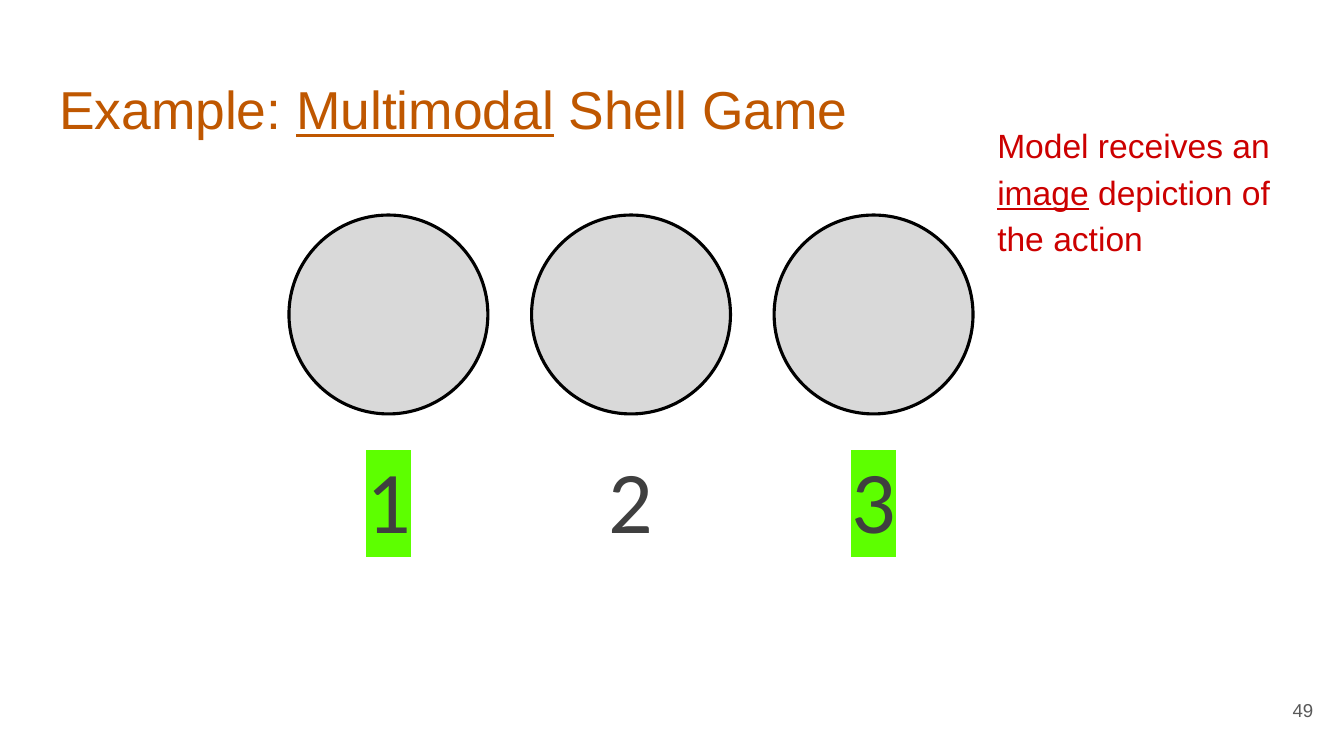
from lxml.etree import SubElement as Sub, Element
from pptx import Presentation
from pptx.dml.color import RGBColor as RGB
from pptx.enum.shapes import MSO_SHAPE as Shape
from pptx.enum.text import MSO_ANCHOR as Anchor, MSO_AUTO_SIZE as Fit, PP_ALIGN as Align
from pptx.oxml.ns import qn
from pptx.util import Inches, Pt

COLORS = {
    "title": "BF5700", "note": "CC0000", "cup": "D9D9D9", "edge": "000000",
    "label": "3F3F3F", "mark": "5DFF00", "page": "595959",
}


class Deck:
    def __init__(self, width, height):
        self.prs = Presentation()
        self.prs.slide_width = Inches(width)
        self.prs.slide_height = Inches(height)
        self.slide = self.prs.slides.add_slide(self.prs.slide_layouts[1])

    def color(self, name):
        return RGB.from_string(COLORS[name])

    def fill_text(self, shape, runs, size, color, align=Align.LEFT,
                  font="Arial", inset=(0.1, 0.05), anchor=Anchor.MIDDLE, mark=None):
        """Write (text, underlined) runs into one paragraph."""
        frame = shape.text_frame
        frame.word_wrap = True
        frame.auto_size = Fit.NONE
        frame.vertical_anchor = anchor
        frame.margin_left = frame.margin_right = Inches(inset[0])
        frame.margin_top = frame.margin_bottom = Inches(inset[1])
        para = frame.paragraphs[0]
        para.alignment = align
        for text, under in runs:
            run = para.add_run()
            run.text = text
            run.font.size = Pt(size)
            run.font.name = font
            run.font.underline = under
            run.font.color.rgb = self.color(color)
            if mark:
                light = Element(qn("a:highlight"))
                Sub(light, qn("a:srgbClr"), val=COLORS[mark])
                run.font._element.find(qn("a:solidFill")).addnext(light)
        return para

    def holder(self, index, box, runs, size, color):
        shape = self.slide.placeholders[index]
        shape.left, shape.top, shape.width, shape.height = map(Inches, box)
        return self.fill_text(shape, runs, size, color)

    def text(self, box, words, size, color, **style):
        shape = self.slide.shapes.add_textbox(*map(Inches, box))
        return self.fill_text(shape, [(words, False)], size, color, **style)

    def circle(self, left, top, size):
        box = map(Inches, (left, top, size, size))
        shape = self.slide.shapes.add_shape(Shape.OVAL, *box)
        shape.shadow.inherit = False
        shape.fill.solid()
        shape.fill.fore_color.rgb = self.color("cup")
        shape.line.color.rgb = self.color("edge")
        shape.line.width = Pt(1.68)


def main():
    deck = Deck(10, 10 * 9 / 16)

    # Title
    deck.holder(0, (0.34, 0.49, 9.32, 0.63),
                [("Example: ", False), ("Multimodal", True), (" Shell Game", False)],
                28.6, "title")

    # Side note, without a bullet
    note = deck.holder(1, (7.32, 0.49, 2.6, 1.83),
                       [("Model receives an ", False), ("image", True),
                        (" depiction of the action", False)], 18, "note")
    note.line_spacing = 1.15
    note.space_before = Pt(6.4)
    props = note._p.get_or_add_pPr()
    props.set("marL", "0")
    props.set("indent", "0")
    Sub(props, qn("a:buNone"))

    # Cups with their numbers; the outer pair is marked
    size, wide = 1.48, 0.79
    first, last = 2.15, 5.76
    for i in range(3):
        left = first + i * (last - first) / 2
        deck.circle(left, 1.6, size)
        deck.text((left + (size - wide) / 2, 3.4, wide, 0.62), str(i + 1), 47.1,
                  "label", align=Align.CENTER, font="Calibri", inset=(0.22, 0.22),
                  mark="mark" if i != 1 else None)

    # Page number
    deck.text((9.27, 5.1, 0.6, 0.43), "49", 10, "page", align=Align.RIGHT,
              inset=(0.1, 0.1), anchor=Anchor.TOP)

    deck.prs.save("out.pptx")


if __name__ == "__main__":
    main()
